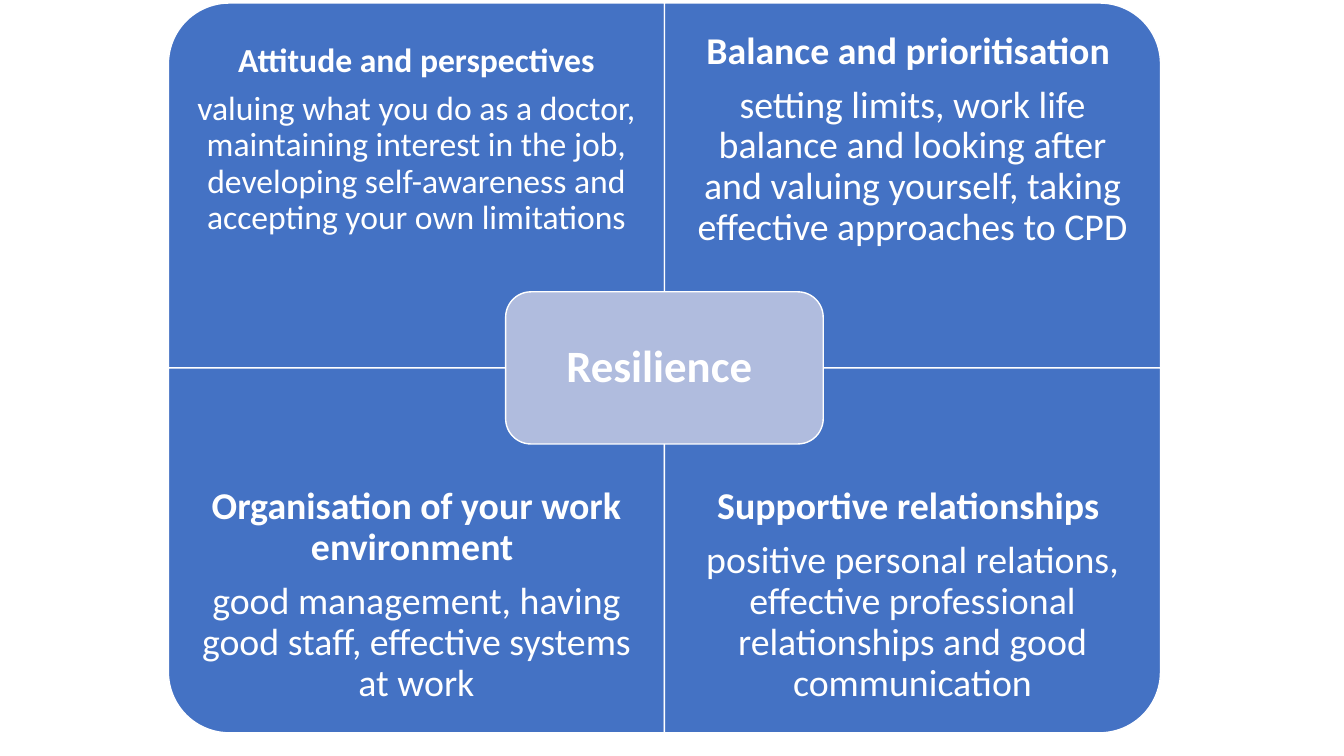
from pptx import Presentation
from pptx.dml.color import RGBColor
from pptx.enum.shapes import MSO_SHAPE
from pptx.enum.text import MSO_ANCHOR, PP_ALIGN
from pptx.util import Inches, Pt

CORNER = MSO_SHAPE.ROUND_1_RECTANGLE
ROUNDED = MSO_SHAPE.ROUNDED_RECTANGLE
MIDDLE = MSO_ANCHOR.MIDDLE
CENTER = PP_ALIGN.CENTER

WHITE = RGBColor(0xFF, 0xFF, 0xFF)
BLUE = RGBColor(0x44, 0x72, 0xC4)
PALE = RGBColor(0xB0, 0xBC, 0xDE)

LEFT, TOP = 1.67, 0.03
WIDE, HIGH = 4.92, 3.62
TEXT_HIGH = 2.72
HUB_WIDE, HUB_HIGH = 3.15, 1.51

# column, row, rotation, text size, inset, heading, detail
QUARTERS = [
    (0, 0, 270, 24, 0.19, "Attitude and perspectives",
     "valuing what you do as a doctor, maintaining interest in the job, "
     "developing self-awareness and accepting your own limitations"),
    (1, 0, 0, 27, 0.21, "Balance and prioritisation ",
     "setting limits, work life balance and looking after and valuing "
     "yourself, taking effective approaches to CPD"),
    (0, 1, 180, 27, 0.21, "Organisation of your work environment ",
     "good management, having good staff, effective systems at work"),
    (1, 1, 90, 27, 0.21, "Supportive relationships ",
     "positive personal relations, effective professional relationships "
     "and good communication"),
]


def set_all(target, values):
    for name, value in values.items():
        setattr(target, name, value)


def add_panel(slide, kind, mid_x, mid_y, wide, high, color, turn=0):
    """Add a white-edged shape around its centre point."""
    panel = slide.shapes.add_shape(
        kind, Inches(mid_x - wide / 2), Inches(mid_y - high / 2),
        Inches(wide), Inches(high))
    panel.rotation = turn
    panel.shadow.inherit = False
    panel.fill.solid()
    panel.fill.fore_color.rgb = color
    panel.line.color.rgb = WHITE
    panel.line.width = Pt(1)
    return panel


def write(shape, lines, size, inset):
    """Fill a shape with centred text, the first line in bold."""
    frame = shape.text_frame
    sides = ("left", "top", "right", "bottom")
    set_all(frame, {f"margin_{side}": Inches(inset) for side in sides})
    set_all(frame, {"word_wrap": True, "vertical_anchor": MIDDLE})
    for index, line in enumerate(lines):
        para = frame.add_paragraph() if index else frame.paragraphs[0]
        set_all(para, {"alignment": CENTER, "line_spacing": 0.9,
                       "space_after": Pt(0.35 * size)})
        run = para.add_run()
        run.text = line
        set_all(run.font, {"name": "Calibri", "size": Pt(size),
                           "bold": index == 0})
        run.font.color.rgb = WHITE


def add_quarter(slide, col, row, turn, size, inset, heading, detail):
    left, top = LEFT + col * WIDE, TOP + row * HIGH
    # A quarter turn swaps the sides of the unrotated shape.
    wide, high = (HIGH, WIDE) if turn % 180 else (WIDE, HIGH)
    add_panel(slide, CORNER, left + WIDE / 2, top + HIGH / 2,
              wide, high, BLUE, turn)
    box = slide.shapes.add_textbox(
        Inches(left), Inches(top + row * (HIGH - TEXT_HIGH)),
        Inches(WIDE), Inches(TEXT_HIGH))
    write(box, [heading, detail], size, inset)


def main():
    deck = Presentation()
    set_all(deck, {"slide_width": Inches(13.33),
                   "slide_height": Inches(7.5)})
    slide = deck.slides.add_slide(deck.slide_layouts[6])
    for quarter in QUARTERS:
        add_quarter(slide, *quarter)
    hub = add_panel(slide, ROUNDED, LEFT + WIDE, TOP + HIGH,
                    HUB_WIDE, HUB_HIGH, PALE)
    write(hub, ["Resilience "], 32, 0.13)
    deck.save("out.pptx")


if __name__ == "__main__":
    main()
